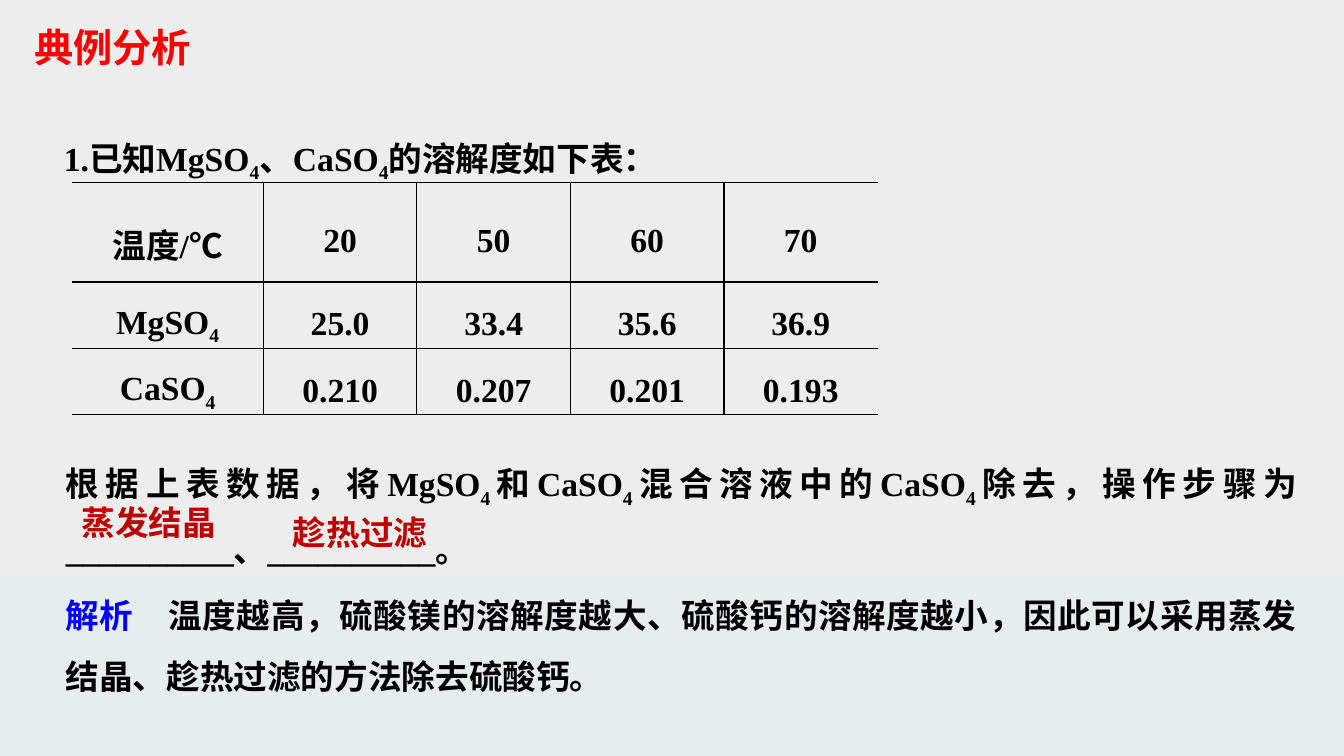
from lxml.etree import SubElement
from pptx import Presentation
from pptx.dml.color import RGBColor
from pptx.enum.shapes import MSO_SHAPE
from pptx.enum.text import MSO_ANCHOR, MSO_AUTO_SIZE, PP_ALIGN
from pptx.oxml import parse_xml
from pptx.oxml.ns import nsdecls, qn
from pptx.util import Pt

SERIF = "Times New Roman"
CHINESE = "Noto Sans CJK SC"
BLACK, RED = "000000", "C00000"


def paint(target, colour):
    """Give a fill or a font its solid colour."""
    if hasattr(target, "solid"):
        target.solid()
        target.fore_color.rgb = RGBColor.from_string(colour)
    else:
        target.color.rgb = RGBColor.from_string(colour)


def write(para, text, colour=BLACK, size=24, latin=SERIF):
    """Add bold text; every second part between bars is a subscript."""
    for index, part in enumerate(text.split("|")):
        span = para.add_run()
        span.text = part
        for name, value in {"size": Pt(size), "bold": True, "name": latin}.items():
            setattr(span.font, name, value)
        paint(span.font, colour)
        properties = span.font._element
        SubElement(properties, qn("a:ea")).set("typeface", CHINESE)
        if index % 2:
            properties.set("baseline", "-25000")


deck = Presentation()
deck.slide_width, deck.slide_height = Pt(960), Pt(540)
page = deck.slides.add_slide(deck.slide_layouts[5])
paint(page.background.fill, "EDEDED")

# Pale band along the bottom
band = page.shapes.add_shape(MSO_SHAPE.RECTANGLE, Pt(0), Pt(411.6), Pt(960), Pt(128.4))
band.shadow.inherit = False
band.line.fill.background()
paint(band.fill, "DBEEF4")
band_colour = band.fill._xPr.find(qn("a:solidFill"))[0]
SubElement(band_colour, qn("a:alpha")).set("val", "34000")

# Title
title = page.shapes.title
for name, value in {"left": 17.3, "top": 13, "width": 134.6, "height": 41}.items():
    setattr(title, name, Pt(value))
frame = title.text_frame
for name, value in {"word_wrap": True, "auto_size": MSO_AUTO_SIZE.NONE,
                    "vertical_anchor": MSO_ANCHOR.TOP}.items():
    setattr(frame, name, value)
frame.paragraphs[0].alignment = PP_ALIGN.LEFT
write(frame.paragraphs[0], "典例分析", "FF0000", 28, "Calibri")

# Solubility table
rows = [
    ["温度/", "20", "50", "60", "70"],
    ["MgSO|4", "25.0", "33.4", "35.6", "36.9"],
    ["CaSO|4", "0.210", "0.207", "0.201", "0.193"],
]
last = len(rows[0]) - 1
table = page.shapes.add_table(len(rows), last + 1, Pt(51.3), Pt(130.2), Pt(576), Pt(166)).table
table.first_row = table.horz_banding = False
for index, column in enumerate(table.columns):
    column.width = Pt(109.7 if index else 136.8)
for index, row in enumerate(table.rows):
    row.height = Pt(47.4 if index else 71.3)

for row_index, row in enumerate(rows):
    for column_index, text in enumerate(row):
        cell = table.cell(row_index, column_index)
        for name, value in {"margin_left": Pt(5), "margin_right": Pt(5), "margin_top": 0,
                            "margin_bottom": 0, "vertical_anchor": MSO_ANCHOR.MIDDLE}.items():
            setattr(cell, name, value)
        cell.fill.background()
        para = cell.text_frame.paragraphs[0]
        para.alignment, para.line_spacing = PP_ALIGN.CENTER, 1.5
        write(para, text)
        # The outer left and right edges stay open
        hidden = {0: "L", last: "R"}.get(column_index)
        for order, side in enumerate("LRTB"):
            stroke = "<a:noFill/>" if side == hidden else (
                f'<a:solidFill><a:srgbClr val="{BLACK}"/></a:solidFill>')
            cell._tc.get_or_add_tcPr().insert(order, parse_xml(
                f'<a:ln{side} {nsdecls("a")} w="12700">{stroke}</a:ln{side}>'))
write(table.cell(0, 0).text_frame.paragraphs[0], "℃", latin=CHINESE)

# Question, answers and explanation: box, wrap, alignment, line spacing, coloured parts
texts = [
    ((37.4, 309.6, 898.6, 96.5), True, PP_ALIGN.JUSTIFY, 1.5,
     [("根据上表数据，将MgSO|4|和CaSO|4|混合溶液中的CaSO|4|除去，操作步骤为"
       "__________、__________。", BLACK)]),
    ((36, 77, 898.6, 53.3), True, PP_ALIGN.JUSTIFY, 1.5,
     [("1.已知MgSO|4|、CaSO|4|的溶解度如下表：", BLACK)]),
    ((51.1, 355, 110.2, 36), False, PP_ALIGN.LEFT, 1.0, [("蒸发结晶", RED)]),
    ((202.1, 347.8, 110.2, 51.1), False, PP_ALIGN.JUSTIFY, 1.5, [("趁热过滤", RED)]),
    ((37.4, 406.1, 898.6, 96.5), True, PP_ALIGN.JUSTIFY, 1.5,
     [("解析　", "0000FF"),
      ("温度越高，硫酸镁的溶解度越大、硫酸钙的溶解度越小，因此可以采用蒸发"
       "结晶、趁热过滤的方法除去硫酸钙。", BLACK)]),
]
for place, wrap, alignment, spacing, parts in texts:
    box = page.shapes.add_textbox(*map(Pt, place))
    side, edge = (Pt(9.6), Pt(4.8)) if wrap else (Pt(7.2), Pt(3.6))
    for name, value in {"word_wrap": wrap, "auto_size": MSO_AUTO_SIZE.SHAPE_TO_FIT_TEXT,
                        "margin_left": side, "margin_right": side,
                        "margin_top": edge, "margin_bottom": edge}.items():
        setattr(box.text_frame, name, value)
    para = box.text_frame.paragraphs[0]
    para.alignment, para.line_spacing = alignment, spacing
    for text, colour in parts:
        write(para, text, colour)

deck.save("out.pptx")
